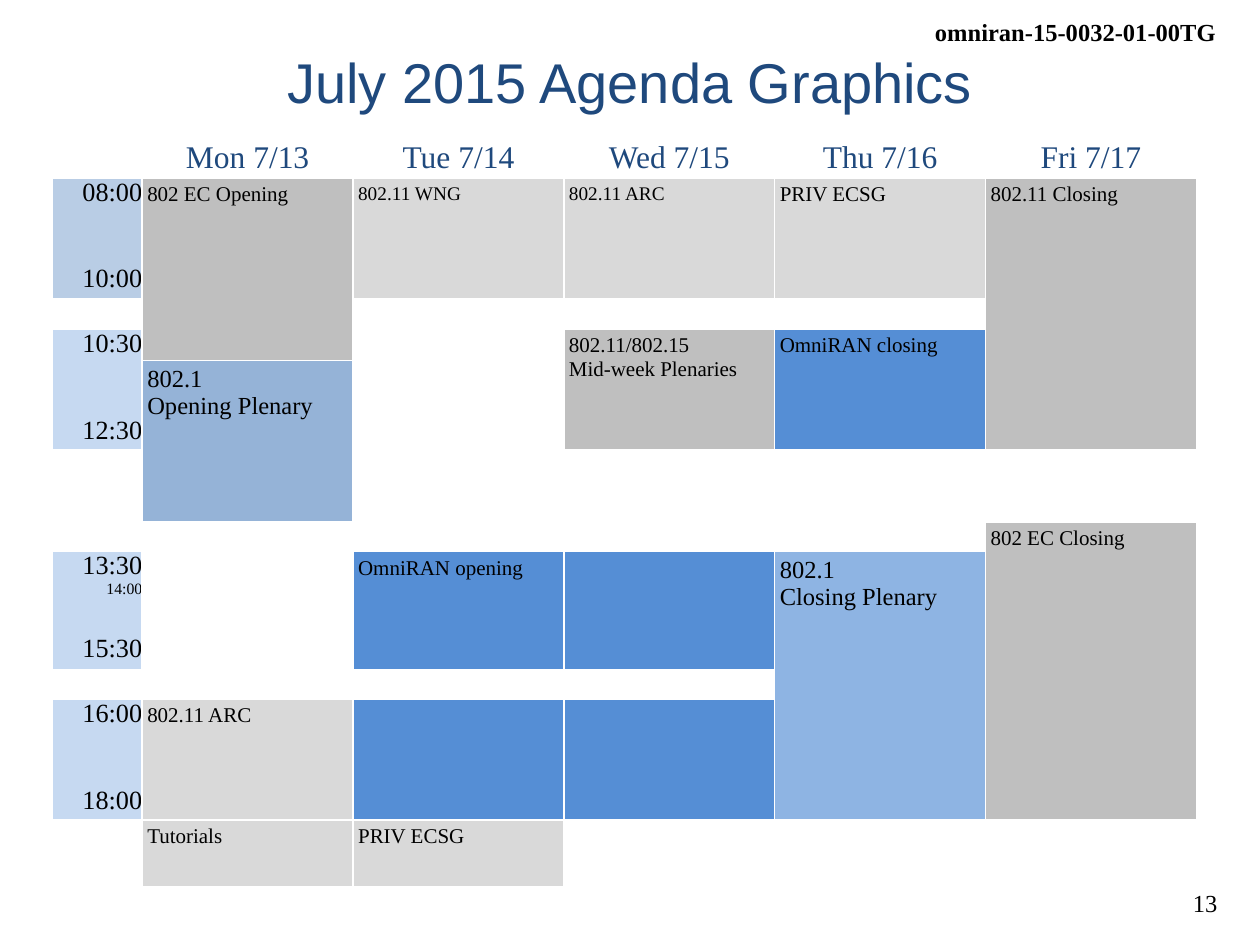
from dataclasses import dataclass

from pptx import Presentation
from pptx.dml.color import RGBColor as Rgb
from pptx.enum.text import MSO_ANCHOR as Anchor, PP_ALIGN as Align
from pptx.util import Pt


@dataclass(frozen=True)
class Theme:
    head: str = "Arial"
    body: str = "Times New Roman"
    navy: str = "1F497D"
    black: str = "000000"
    white: str = "FFFFFF"
    light: str = "D9D9D9"
    grey: str = "BFBFBF"
    blue: str = "558ED5"
    sky: str = "8EB4E3"
    steel: str = "95B3D7"
    early: str = "B9CDE5"
    pale: str = "C6D9F1"
    title: float = 32
    day: float = 18
    time: float = 15
    main: float = 14
    item: float = 12
    small: float = 11
    tiny: float = 9


T = Theme()


@dataclass(frozen=True)
class Block:
    row: int
    col: int
    span: int = 1
    fill: str = T.white
    text: str = ""
    size: float = T.item


@dataclass(frozen=True)
class Slot:
    row: int
    span: int
    fill: str
    start: str
    end: str
    gap: float
    mid: str = ""


DAYS = ("Mon 7/13", "Tue 7/14", "Wed 7/15", "Thu 7/16", "Fri 7/17")
COLS = (51.3,) + (120.5,) * len(DAYS)
ROWS = (21, 68.5, 17.5, 18, 48.5, 41, 17, 18, 46, 17, 68.5, 19, 19)
SLOTS = (
    Slot(1, 1, T.early, "08:00", "10:00", 33),
    Slot(3, 2, T.pale, "10:30", "12:30", 33),
    Slot(7, 2, T.pale, "13:30", "15:30", 20.5, "14:00"),
    Slot(10, 1, T.pale, "16:00", "18:00", 33),
)
BLOCKS = (
    Block(1, 1, 3, T.grey, "802 EC Opening"),
    Block(4, 1, 2, T.steel, "802.1\vOpening Plenary", T.main),
    Block(6, 1, 2),
    Block(10, 1, 1, T.light, "802.11 ARC"),
    Block(11, 1, 2, T.light, "Tutorials"),
    Block(1, 2, 1, T.light, "802.11 WNG", T.small),
    Block(3, 2, 2),
    Block(7, 2, 2, T.blue, "OmniRAN opening"),
    Block(10, 2, 1, T.blue),
    Block(11, 2, 2, T.light, "PRIV ECSG"),
    Block(1, 3, 1, T.light, "802.11 ARC", T.small),
    Block(3, 3, 2, T.grey, "802.11/802.15\vMid-week Plenaries"),
    Block(7, 3, 2, T.blue),
    Block(10, 3, 1, T.blue),
    Block(1, 4, 1, T.light, "PRIV ECSG"),
    Block(3, 4, 2, T.blue, "OmniRAN closing"),
    Block(7, 4, 4, T.sky, "802.1\vClosing Plenary", T.main),
    Block(1, 5, 4, T.grey, "802.11 Closing"),
    Block(6, 5, 5, T.grey, "802 EC Closing"),
    *(Block(5, col, 2) for col in (0, 2, 3, 4)),
    *(Block(11, col, 2) for col in (0, 3, 4)),
)


def style(para, size: float, color: str = T.black, face: str = T.body,
          align=Align.LEFT, bold: bool = False) -> None:
    """Format one paragraph."""
    font = para.font
    font.name, font.size, font.bold = face, Pt(size), bold
    font.color.rgb = Rgb.from_string(color)
    para.alignment = align


def inset(box, size: float) -> None:
    """Give all four margins one width."""
    box.margin_left = box.margin_right = Pt(size)
    box.margin_top = box.margin_bottom = Pt(size)


def paint(cell, fill: str) -> None:
    """Fill a cell with one colour."""
    cell.fill.solid()
    cell.fill.fore_color.rgb = Rgb.from_string(fill)


def place(grid, row: int, col: int, span: int, fill: str):
    """Merge a cell downward, fill it and return it."""
    cell = grid.cell(row, col)
    if span > 1:
        cell.merge(grid.cell(row + span - 1, col))
    paint(cell, fill)
    return cell


def draw_block(grid, block: Block) -> None:
    """Draw one session."""
    cell = place(grid, block.row, block.col, block.span, block.fill)
    if block.text:
        inset(cell, 2.9)
        cell.text = block.text
        style(cell.text_frame.paragraphs[0], block.size)


def draw_slot(grid, slot: Slot) -> None:
    """Draw the start and end times of one slot."""
    frame = place(grid, slot.row, 0, slot.span, slot.fill).text_frame
    frame.text = "\n".join(filter(None, (slot.start, slot.mid, slot.end)))
    for para in frame.paragraphs:
        size = T.tiny if para.text == slot.mid else T.time
        style(para, size, align=Align.RIGHT)
    frame.paragraphs[-1].space_before = Pt(slot.gap)


def draw_grid(slide) -> None:
    """Draw the week as a table."""
    shape = slide.shapes.add_table(len(ROWS), len(COLS), Pt(30), Pt(80),
                                   Pt(sum(COLS)), Pt(sum(ROWS)))
    grid = shape.table
    grid.horz_banding = False
    for col, width in zip(grid.columns, COLS):
        col.width = Pt(width)
    for row, height in zip(grid.rows, ROWS):
        row.height = Pt(height)
    for cell in grid.iter_cells():
        paint(cell, T.white)
        inset(cell, 0)
        style(cell.text_frame.paragraphs[0], T.tiny)
    for col, day in enumerate(DAYS, 1):
        cell = grid.cell(0, col)
        cell.text = day
        style(cell.text_frame.paragraphs[0], T.day, T.navy, align=Align.CENTER)
    for slot in SLOTS:
        draw_slot(grid, slot)
    for block in BLOCKS:
        draw_block(grid, block)


def draw_note(slide, text: str, left: float, top: float, width: float,
              bold: bool = False) -> None:
    """Draw a right-aligned page label."""
    box = slide.shapes.add_textbox(Pt(left), Pt(top), Pt(width), Pt(24.5))
    box.text_frame.text = text
    style(box.text_frame.paragraphs[0], T.main, align=Align.RIGHT, bold=bold)


def draw_title(slide, text: str) -> None:
    """Fill and move the title placeholder."""
    title = slide.shapes.title
    title.left, title.top = Pt(36), Pt(21.6)
    title.width, title.height = Pt(648), Pt(56)
    frame = title.text_frame
    frame.text = text
    frame.vertical_anchor = Anchor.MIDDLE
    frame.margin_bottom = Pt(10)
    style(frame.paragraphs[0], T.title, T.navy, T.head, Align.CENTER)


def main() -> None:
    """Build the agenda slide."""
    deck = Presentation()
    deck.slide_width, deck.slide_height = Pt(720), Pt(540)
    slide = deck.slides.add_slide(deck.slide_layouts[5])
    draw_note(slide, "omniran-15-0032-01-00TG", 525.6, 6, 176.4, True)
    draw_note(slide, "13", 671.8, 504, 31)
    draw_title(slide, "July 2015 Agenda Graphics")
    draw_grid(slide)
    deck.save("out.pptx")


if __name__ == "__main__":
    main()
